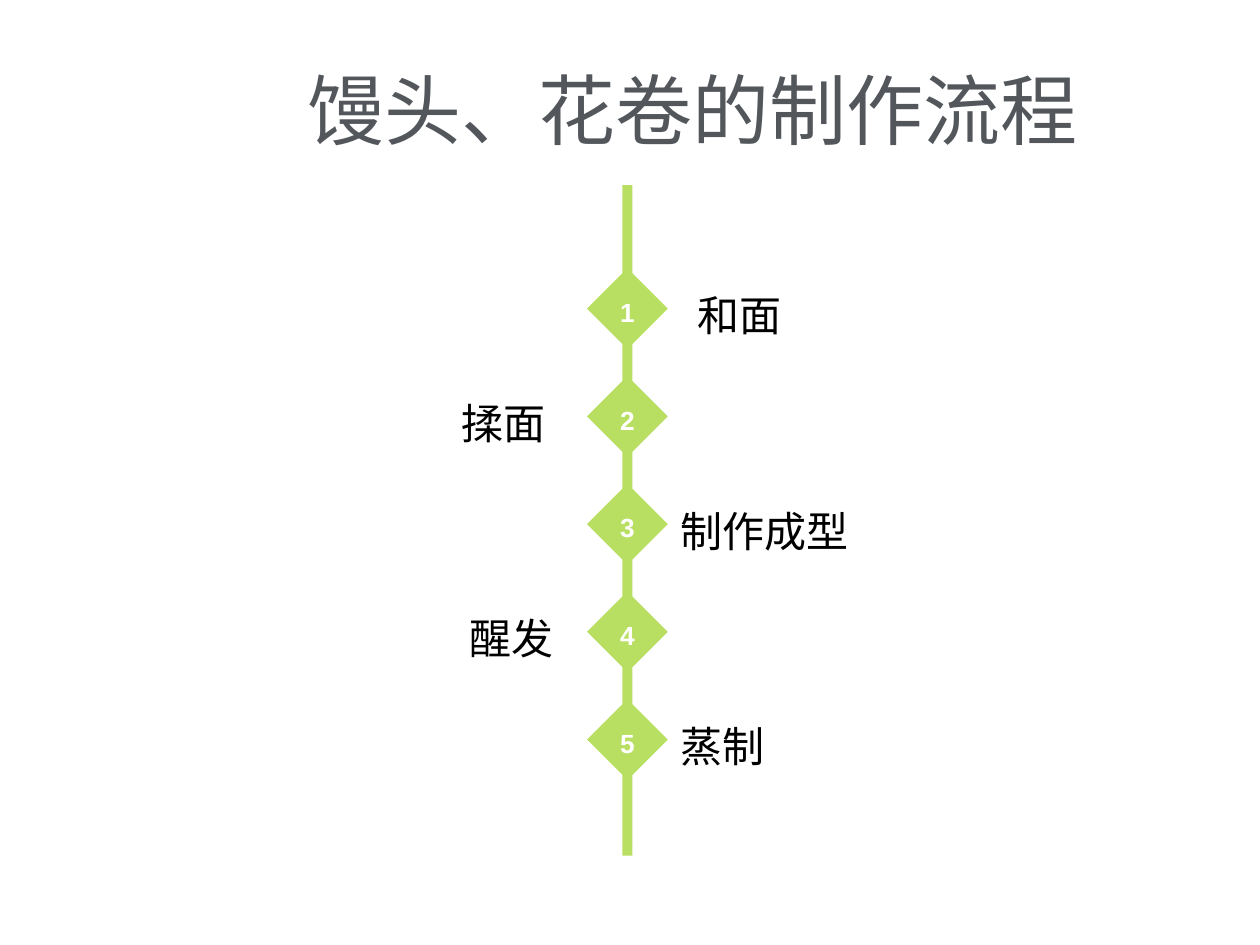
from pptx import Presentation
from pptx.dml.color import RGBColor
from pptx.enum.shapes import MSO_SHAPE
from pptx.enum.text import MSO_ANCHOR, PP_ALIGN
from pptx.util import Inches, Pt

COLORS = {"title": "53575C", "green": "B8DF62", "white": "FFFFFF", "black": "000000"}
STEPS = [
    ("和面", 5.44, PP_ALIGN.LEFT),
    ("揉面", 0.92, PP_ALIGN.RIGHT),
    ("制作成型", 5.3, PP_ALIGN.LEFT),
    ("醒发", 0.98, PP_ALIGN.RIGHT),
    ("蒸制", 5.3, PP_ALIGN.LEFT),
]
FIRST, LAST = 2.13, 5.55


def write(frame, text, size, color, align, spacing, bold=False):
    """Fill a text frame with one styled paragraph."""
    frame.word_wrap = True
    para = frame.paragraphs[0]
    para.text = text
    para.alignment = align
    para.line_spacing = spacing
    font = para.font
    font.name, font.size, font.bold = "Arial", Pt(size), bold
    font.color.rgb = RGBColor.from_string(COLORS[color])


def add_label(slide, box, *style):
    """Add a text box holding one styled paragraph."""
    label = slide.shapes.add_textbox(*map(Inches, box))
    write(label.text_frame, *style)


def add_solid(slide, kind, box):
    """Add a flat green shape without an outline."""
    shape = slide.shapes.add_shape(kind, *map(Inches, box))
    shape.shadow.inherit = False
    shape.fill.solid()
    shape.fill.fore_color.rgb = RGBColor.from_string(COLORS["green"])
    shape.line.fill.background()
    return shape


def add_marker(slide, number, top):
    """Add a numbered diamond on the timeline."""
    frame = add_solid(slide, MSO_SHAPE.DIAMOND, (4.66, top, 0.64, 0.64)).text_frame
    frame.margin_left = frame.margin_right = frame.margin_top = frame.margin_bottom = 0
    frame.vertical_anchor = MSO_ANCHOR.MIDDLE
    write(frame, str(number), 15, "white", PP_ALIGN.CENTER, 1.2, True)


def main():
    """Build the slide of steamed bun steps."""
    deck = Presentation()
    deck.slide_width, deck.slide_height = Inches(10), Inches(7.5)
    slide = deck.slides.add_slide(deck.slide_layouts[6])
    add_label(slide, (2.34, 0.53, 6.34, 1.08), "馒头、花卷的制作流程",
              44, "title", PP_ALIGN.LEFT, 0.9)
    add_solid(slide, MSO_SHAPE.RECTANGLE, (4.94, 1.47, 0.08, 5.32))
    pitch = (LAST - FIRST) / (len(STEPS) - 1)
    for row, (text, left, align) in enumerate(STEPS):
        top = FIRST + row * pitch
        add_marker(slide, row + 1, top)
        add_label(slide, (left, top, 3.51, 0.62), text, 24, "black", align, 1.3)
    deck.save("out.pptx")


if __name__ == "__main__":
    main()
